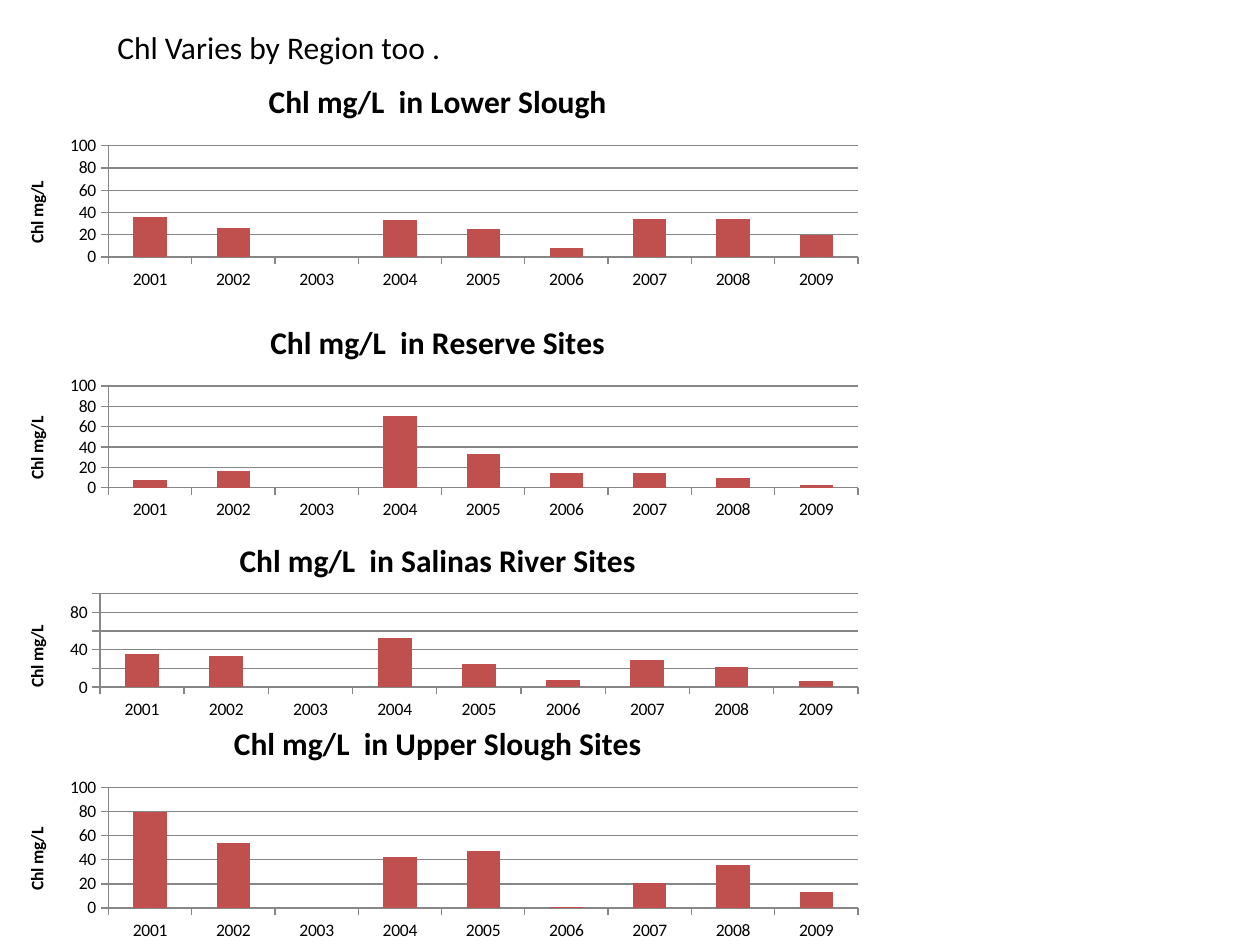
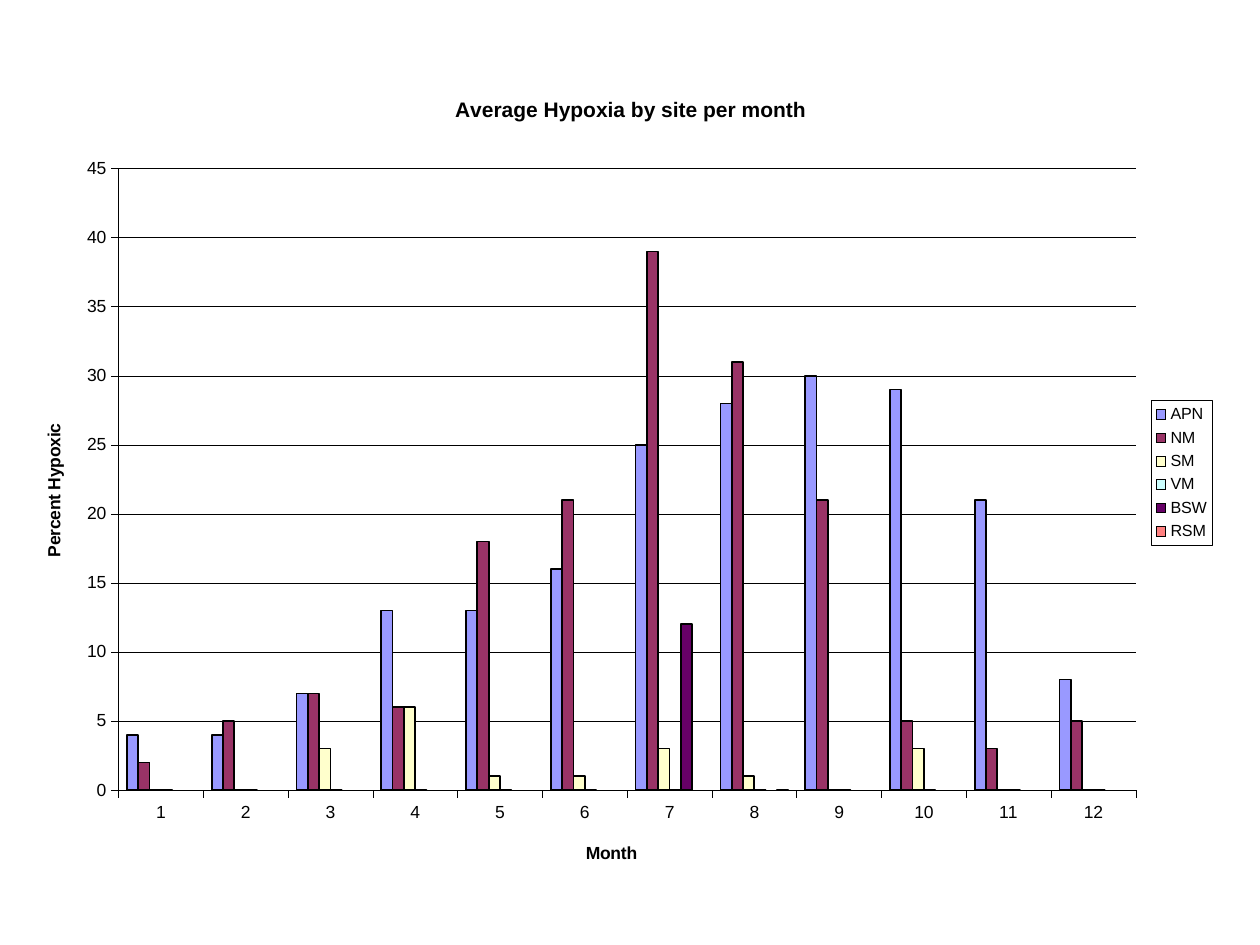
from dataclasses import dataclass

from lxml import etree
from pptx import Presentation
from pptx import util as u
from pptx.chart.data import CategoryChartData
from pptx.dml.color import RGBColor
from pptx.enum import chart as ch
from pptx.enum import text
from pptx.oxml import parse_xml
from pptx.oxml.ns import nsdecls, qn


@dataclass(frozen=True)
class Theme:
    black: str = "000000"
    grey: str = "868686"
    red: str = "C0504D"
    body_font: str = "Calibri"
    chart_font: str = "Arial"
    title: float = 18
    chart_title: float = 12
    label: float = 10
    legend: float = 9.2
    thin: float = 0.25
    axis: float = 0.75
    outline: float = 1


T = Theme()
YEARS = range(2001, 2010)
MONTHS = range(1, 13)

# Region, top and height in cm, yearly values; listed from back to front
REGIONS = [
    ("Upper Slough Sites", 14.2, 4.85, [80, 54, None, 42, 47, 1, 21, 36, 13]),
    ("Lower Slough", 1.27, 4.65, [36, 26, None, 33, 25, 8, 34, 34, 20]),
    ("Reserve Sites", 6.12, 4.45, [8, 16, None, 70, 33, 14, 14, 10, 3]),
    ("Salinas River Sites", 10.52, 4.06, [35, 33, None, 52, 25, 7, 29, 21, 6]),
]


def only_month(month, value):
    """Monthly values with a single month measured."""
    return [value if m == month else None for m in MONTHS]


# Site, colour, monthly percentages
SITES = [
    ("APN", "9999FF", [4, 4, 7, 13, 13, 16, 25, 28, 30, 29, 21, 8]),
    ("NM", "993366", [2, 5, 7, 6, 18, 21, 39, 31, 21, 5, 3, 5]),
    ("SM", "FFFFCC", [0, 0, 3, 6, 1, 1, 3, 1, 0, 3, 0, 0]),
    ("VM", "CCFFFF", [0] * 12),
    ("BSW", "660066", only_month(7, 12)),
    ("RSM", "FF8080", only_month(8, 0)),
]


# --- Text and lines ---
def set_font(font, name, size, bold=False, color=T.black):
    font.name, font.size, font.bold = name, u.Pt(size), bold
    font.color.rgb = RGBColor.from_string(color)


def write(tf, content, font, size, bold=False, color=T.black, align=None):
    p = tf.paragraphs[0]
    p.alignment = align
    r = p.add_run()
    r.text = content
    set_font(r.font, font, size, bold, color)


def set_line(line, color, width):
    line.color.rgb = RGBColor.from_string(color)
    line.width = u.Pt(width)


def add_title(s, content, left, top, width, height):
    sp = s.shapes.title
    sp.left, sp.top, sp.width, sp.height = map(u.Cm, (left, top, width, height))
    tf = sp.text_frame
    tf.word_wrap = True
    tf.auto_size = text.MSO_AUTO_SIZE.SHAPE_TO_FIT_TEXT
    tf.vertical_anchor = text.MSO_ANCHOR.TOP
    write(tf, content, T.body_font, T.title, align=text.PP_ALIGN.LEFT)


# --- Charts ---
def format_axis(axis, font, color, width, title=None):
    axis.major_tick_mark = ch.XL_TICK_MARK.OUTSIDE
    axis.minor_tick_mark = ch.XL_TICK_MARK.NONE
    set_font(axis.tick_labels.font, font, T.label)
    set_line(axis.format.line, color, width)
    if title:
        write(axis.axis_title.text_frame, title, font, T.label, bold=True)


def add_columns(s, box, title, cats, series, font, title_size, value_title,
                top_value, step, line, cat_title=None, outline=None):
    """Clustered columns; series holds (name, colour, values)."""
    data = CategoryChartData()
    data.categories = [str(c) for c in cats]
    for name, _, values in series:
        data.add_series(name, values)
    chart = s.shapes.add_chart(ch.XL_CHART_TYPE.COLUMN_CLUSTERED,
                               *map(u.Cm, box), data).chart
    set_font(chart.font, font, T.label)
    chart.has_legend = False
    write(chart.chart_title.text_frame, title, font, title_size, bold=True)
    chart.chart_title.include_in_layout = False

    # Axes and gridlines
    format_axis(chart.category_axis, font, *line, title=cat_title)
    axis = chart.value_axis
    format_axis(axis, font, *line, title=value_title)
    axis.minimum_scale, axis.maximum_scale, axis.major_unit = 0, top_value, step
    axis.has_major_gridlines = True
    set_line(axis.major_gridlines.format.line, *line)

    # Columns
    plot = chart.plots[0]
    plot.gap_width, plot.overlap, plot.vary_by_categories = 150, 0, False
    for ser, (_, color, _) in zip(plot.series, series):
        ser.invert_if_negative = False
        ser.format.fill.solid()
        ser.format.fill.fore_color.rgb = RGBColor.from_string(color)
        if outline:
            set_line(ser.format.line, *outline)
    return chart


def place_plot(chart, x, y, w, h):
    """Fix the inner plot area, as fractions of the chart."""
    area = chart.plots[0]._element.getparent()
    for old in area.findall(qn("c:layout")):
        area.remove(old)
    layout = parse_xml(f"<c:layout {nsdecls('c')}><c:manualLayout/></c:layout>")
    settings = [("layoutTarget", "inner"), ("xMode", "edge"), ("yMode", "edge"),
                ("x", x), ("y", y), ("w", w), ("h", h)]
    for tag, value in settings:
        etree.SubElement(layout[0], qn(f"c:{tag}")).set("val", str(value))
    area.insert(0, layout)


def add_legend(chart, font):
    chart.has_legend = True
    legend = chart.legend
    legend.position = ch.XL_LEGEND_POSITION.RIGHT
    legend.include_in_layout = False
    set_font(legend.font, font, T.legend)
    frame = parse_xml(
        f"<c:spPr {nsdecls('c', 'a')}><a:ln w='{u.Pt(T.thin)}'><a:solidFill>"
        f"<a:srgbClr val='{T.black}'/></a:solidFill></a:ln></c:spPr>")
    legend._element.find(qn("c:overlay")).addnext(frame)


# --- Slides ---
def chlorophyll_slide(prs):
    s = prs.slides.add_slide(prs.slide_layouts[5])
    add_title(s, "Chl Varies by Region too .", 2.11, 0.43, 19.48, 1.02)
    for region, top, height, values in REGIONS:
        add_columns(s, (0, top, 17.65, height), f"Chl mg/L  in {region}", YEARS,
                    [("Series 1", T.red, values)], T.body_font, T.title,
                    "Chl mg/L", 100, 20, (T.grey, T.axis))


def hypoxia_slide(prs):
    s = prs.slides.add_slide(prs.slide_layouts[6])
    chart = add_columns(s, (0.79, 1.42, 23.85, 16.23),
                        "Average Hypoxia by site per month", MONTHS, SITES,
                        T.chart_font, T.chart_title, "Percent Hypoxic", 45, 5,
                        (T.black, T.thin), cat_title="Month",
                        outline=(T.black, T.outline))
    place_plot(chart, 0.067, 0.122, 0.86, 0.772)
    add_legend(chart, T.chart_font)


def main():
    prs = Presentation()
    prs.slide_width, prs.slide_height = u.Cm(25.4), u.Cm(19.05)
    chlorophyll_slide(prs)
    hypoxia_slide(prs)
    prs.save("out.pptx")


if __name__ == "__main__":
    main()
